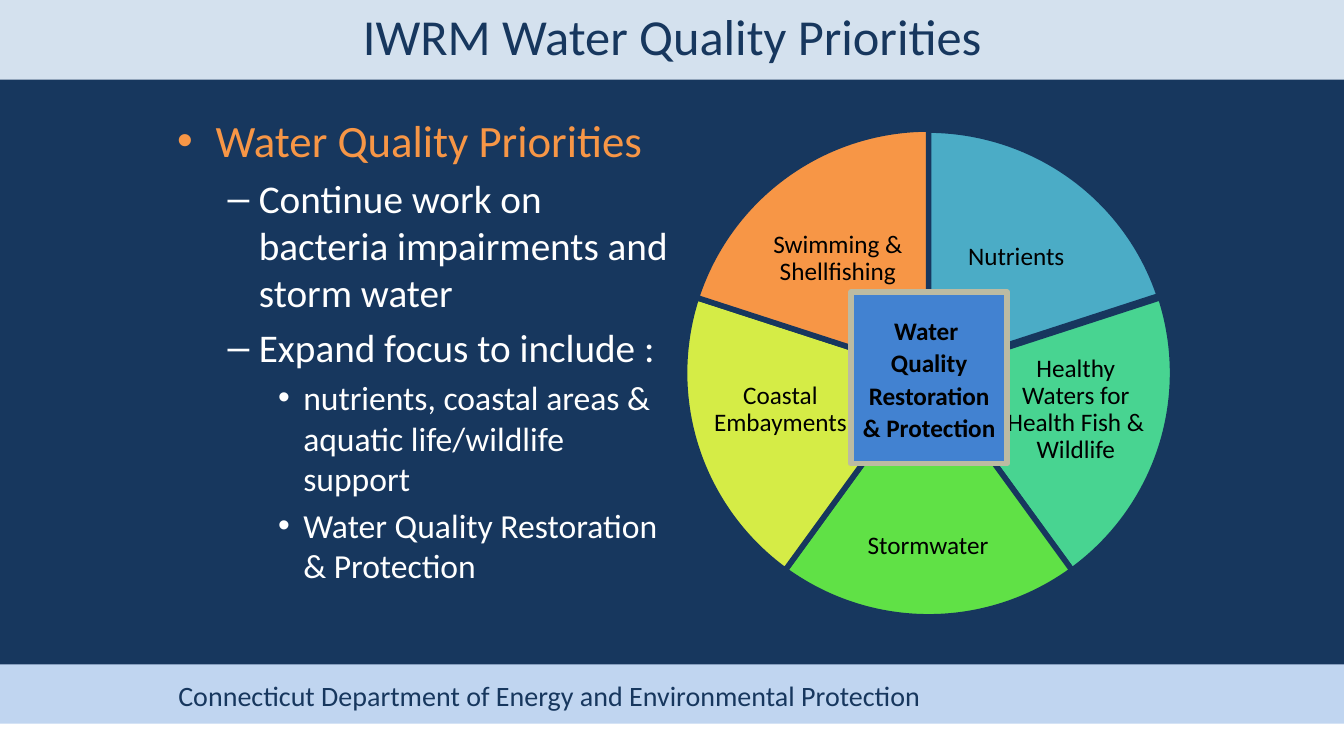
"""Build the IWRM water quality priorities slide."""
from lxml import etree
from pptx import Presentation
from pptx.dml.color import RGBColor
from pptx.enum.shapes import MSO_SHAPE
from pptx.enum.text import MSO_ANCHOR, PP_ALIGN
from pptx.oxml.ns import qn
from pptx.util import Inches, Pt

RECTANGLE, ROUNDED = MSO_SHAPE.RECTANGLE, MSO_SHAPE.ROUNDED_RECTANGLE
PIE = MSO_SHAPE.PIE
MIDDLE, TOP = MSO_ANCHOR.MIDDLE, MSO_ANCHOR.TOP
LEFT, CENTER = PP_ALIGN.LEFT, PP_ALIGN.CENTER

FONT = "Calibri"
NAVY = RGBColor(0x17, 0x37, 0x5E)
WHITE = RGBColor(0xFF, 0xFF, 0xFF)
BLACK = RGBColor(0, 0, 0)
ORANGE = RGBColor(0xF7, 0x96, 0x46)
HEADER_BLUE = RGBColor(0xD4, 0xE1, 0xEE)
FOOTER_BLUE = RGBColor(0xC0, 0xD5, 0xF0)
TEAL = RGBColor(0x4B, 0xAC, 0xC6)
MINT = RGBColor(0x48, 0xD4, 0x91)
GREEN = RGBColor(0x60, 0xE1, 0x46)
LIME = RGBColor(0xD5, 0xEC, 0x46)
HUB_BLUE = RGBColor(0x42, 0x82, 0xD1)
HUB_BORDER = RGBColor(0xBC, 0xBB, 0xA2)

TITLE = "IWRM Water Quality Priorities"
FOOTER = "Connecticut Department of Energy and Environmental Protection"
HUB = "Water \vQuality Restoration & Protection"
BANDS = [
    ((0, 7.08, 13.33, 0.42), WHITE),
    ((0, 0, 13.33, 0.79), HEADER_BLUE),
    ((0, 6.59, 13.33, 0.59), FOOTER_BLUE),
]
WHEEL = (6.79, 1.28, 4.84, 4.84)
NUTRIENTS_WHEEL = (6.78, 1.29, 4.84, 4.78)
SLICES = [
    ("Nutrients", TEAL, NUTRIENTS_WHEEL, (9.26, 2, 1.64, 1.11)),
    ("Healthy Waters for Health Fish & Wildlife", MINT, WHEEL, (9.95, 3.46, 1.44, 1.21)),
    ("Stormwater", GREEN, WHEEL, (8.34, 4.9, 1.73, 1.04)),
    ("Coastal Embayments", LIME, WHEEL, (7.02, 3.46, 1.44, 1.21)),
    ("Swimming & Shellfishing", ORANGE, WHEEL, (7.49, 2.01, 1.64, 1.12)),
]
PRIORITIES = [
    (0, "Water Quality Priorities"),
    (1, "Continue work on bacteria impairments and storm water"),
    (1, "Expand focus to include :"),
    (2, "nutrients, coastal areas & aquatic life/wildlife support"),
    (2, "Water Quality Restoration & Protection"),
]
LEVELS = [
    ("•", 0.38, 0.38, 32, ORANGE),
    ("–", 0.81, 0.31, 28, WHITE),
    ("•", 1.25, 0.25, 24, WHITE),
]


def add_filled(page, kind, place, fill, line=None):
    """Add a flat shape, outlined at 4 points when a line colour is given."""
    shape = page.shapes.add_shape(kind, *map(Inches, place))
    shape.shadow.inherit = False
    shape.fill.solid()
    shape.fill.fore_color.rgb = fill
    if line is None:
        shape.line.fill.background()
    else:
        shape.line.color.rgb = line
        shape.line.width = Pt(4)
    return shape


def style(paragraph, size, color, align=LEFT, bold=False, spacing=None):
    """Format a paragraph and its runs."""
    paragraph.alignment = align
    paragraph.line_spacing = spacing
    for span in paragraph.runs:
        span.font.name = FONT
        span.font.size = Pt(size)
        span.font.bold = bold
        span.font.color.rgb = color


def add_text(page, place, text, size, color, align=LEFT, anchor=TOP, inset=None, spacing=None):
    """Add a wrapped text box holding one paragraph."""
    box = page.shapes.add_textbox(*map(Inches, place))
    frame = box.text_frame
    frame.word_wrap = True
    frame.vertical_anchor = anchor
    if inset is not None:
        frame.margin_left = frame.margin_right = Inches(inset)
        frame.margin_top = frame.margin_bottom = Inches(inset)
    frame.text = text
    style(frame.paragraphs[0], size, color, align, spacing=spacing)


def add_wheel(page):
    """Add five equal slices clockwise from the top, with labels and a hub."""
    sweep = 360 / len(SLICES)
    for index, (label, color, place, label_place) in enumerate(SLICES):
        pie = add_filled(page, PIE, place, color, NAVY)
        start = (270 + index * sweep) % 360
        end = (start + sweep) % 360
        pie.adjustments[0] = start * 0.6
        pie.adjustments[1] = end * 0.6
        add_text(page, label_place, label, 18, BLACK, CENTER, MIDDLE, 0.03, 0.9)
    hub = add_filled(page, ROUNDED, (8.44, 2.9, 1.55, 1.7), HUB_BLUE, HUB_BORDER)
    hub.adjustments[0] = 0
    frame = hub.text_frame
    frame.word_wrap = True
    frame.vertical_anchor = MIDDLE
    frame.text = HUB
    style(frame.paragraphs[0], 18, BLACK, CENTER, bold=True, spacing=1.07)


def add_priorities(page):
    """Add the three-level bulleted list."""
    box = page.shapes.add_textbox(*map(Inches, (1.66, 1.07, 5.06, 5.04)))
    frame = box.text_frame
    frame.word_wrap = True
    for index, (level, text) in enumerate(PRIORITIES):
        bullet, margin, hanging, size, color = LEVELS[level]
        para = frame.add_paragraph() if index else frame.paragraphs[0]
        para.text = text
        para.level = level
        if index:
            para.space_before = Pt(size * 0.2)
        style(para, size, color)
        properties = para._p.get_or_add_pPr()
        properties.set("marL", str(Inches(margin)))
        properties.set("indent", str(-Inches(hanging)))
        etree.SubElement(properties, qn("a:buFont"), typeface="Arial")
        etree.SubElement(properties, qn("a:buChar"), char=bullet)


def main():
    """Assemble and save the deck."""
    deck = Presentation()
    deck.slide_width, deck.slide_height = Inches(13.33), Inches(7.5)
    page = deck.slides.add_slide(deck.slide_layouts[6])
    page.background.fill.solid()
    page.background.fill.fore_color.rgb = NAVY
    for place, color in BANDS:
        add_filled(page, RECTANGLE, place, color)
    add_text(page, (1.67, 6.68, 11.48, 0.44), FOOTER, 20, NAVY)
    add_wheel(page)
    add_text(page, (1.67, 0, 10, 0.78), TITLE, 36, NAVY, CENTER)
    add_priorities(page)
    deck.save("out.pptx")


if __name__ == "__main__":
    main()
